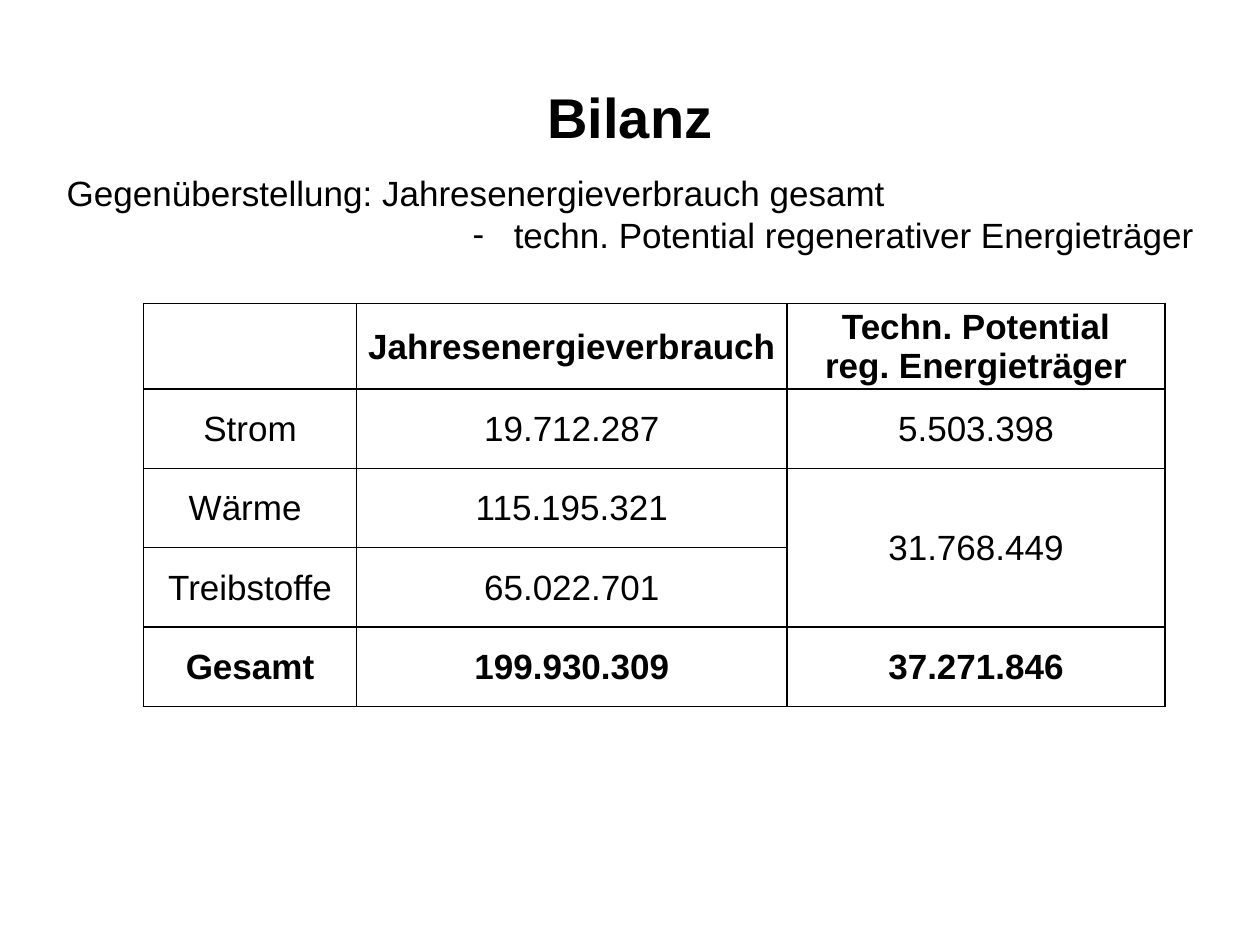
from lxml.etree import SubElement
from pptx import Presentation
from pptx.dml.color import RGBColor
from pptx.enum.text import MSO_ANCHOR as Anchor, PP_ALIGN as Align
from pptx.oxml.ns import qn
from pptx.util import Pt

BLACK = "000000"


def color(hex_value):
    return RGBColor.from_string(hex_value)


class BalanceSlide:
    font_name = "Arial"
    body_size = 20
    cell_format = {
        "vertical_anchor": Anchor.MIDDLE,
        "margin_left": Pt(0.72),
        "margin_right": Pt(0.72),
        "margin_top": Pt(0.72),
        "margin_bottom": Pt(0),
    }

    def __init__(self, deck):
        self.slide = deck.slides.add_slide(deck.slide_layouts[6])

    def fill_lines(self, frame, lines, size=body_size, bold=False, align=Align.LEFT):
        for index, line in enumerate(lines):
            paragraph = frame.paragraphs[0] if index == 0 else frame.add_paragraph()
            paragraph.text = line
            paragraph.alignment = align
            style = {"name": self.font_name, "size": Pt(size), "bold": bold}
            for run in paragraph.runs:
                for key, value in style.items():
                    setattr(run.font, key, value)
                run.font.color.rgb = color(BLACK)

    def text(self, box, lines, anchor=Anchor.TOP, **style):
        frame = self.slide.shapes.add_textbox(*map(Pt, box)).text_frame
        frame.word_wrap = True
        frame.vertical_anchor = anchor
        self.fill_lines(frame, lines, **style)
        return frame

    def dash(self, paragraph, left, hanging):
        """Turn the paragraph into an indented item marked with a dash."""
        properties = paragraph._p.get_or_add_pPr()
        properties.set("marL", str(Pt(left)))
        properties.set("indent", str(-Pt(hanging)))
        SubElement(properties, qn("a:buFont"), typeface=self.font_name)
        SubElement(properties, qn("a:buChar"), char="-")

    def border(self, cell, width=1):
        properties = cell._tc.get_or_add_tcPr()
        for position, side in enumerate(("lnL", "lnR", "lnT", "lnB")):
            line = properties.makeelement(qn(f"a:{side}"), {"w": str(Pt(width))})
            fill = SubElement(line, qn("a:solidFill"))
            SubElement(fill, qn("a:srgbClr"), val=BLACK)
            properties.insert(position, line)

    def table(self, left, top, widths, heights, rows, bold_rows):
        table = self.slide.shapes.add_table(
            len(rows), len(widths), Pt(left), Pt(top), Pt(sum(widths)), Pt(sum(heights))
        ).table
        table.first_row = table.horz_banding = False
        for column, width in zip(table.columns, widths):
            column.width = Pt(width)
        for index, (row, height) in enumerate(zip(rows, heights)):
            table.rows[index].height = Pt(height)
            for cell, content in zip(table.rows[index].cells, row):
                for key, value in self.cell_format.items():
                    setattr(cell, key, value)
                cell.fill.background()
                self.border(cell)
                if content:
                    self.fill_lines(cell.text_frame, content.split("\n"),
                                    bold=index in bold_rows, align=Align.CENTER)
        return table


def main():
    deck = Presentation()
    deck.slide_width, deck.slide_height = Pt(720), Pt(540)
    balance = BalanceSlide(deck)

    balance.text((36, 21.6, 648, 90), ["Bilanz"], anchor=Anchor.MIDDLE,
                 size=32, bold=True, align=Align.CENTER)

    comparison = balance.text((31, 94.3, 668.9, 55.4), [
        "Gegenüberstellung: Jahresenergieverbrauch gesamt",
        "techn. Potential regenerativer Energieträger",
    ])
    balance.dash(comparison.paragraphs[1], left=255.5, hanging=23.5)

    energy_rows = [
        ("", "Jahresenergieverbrauch", "Techn. Potential\nreg. Energieträger"),
        ("Strom", "19.712.287", "5.503.398"),
        ("Wärme ", "115.195.321", "31.768.449"),
        ("Treibstoffe", "65.022.701", ""),
        ("Gesamt", "199.930.309", "37.271.846"),
    ]
    energy = balance.table(82, 173.5, [121.8, 246, 216], [48.6] + [45.36] * 4,
                           energy_rows, bold_rows=(0, 4))
    energy.cell(2, 2).merge(energy.cell(3, 2))

    deck.save("out.pptx")


if __name__ == "__main__":
    main()
